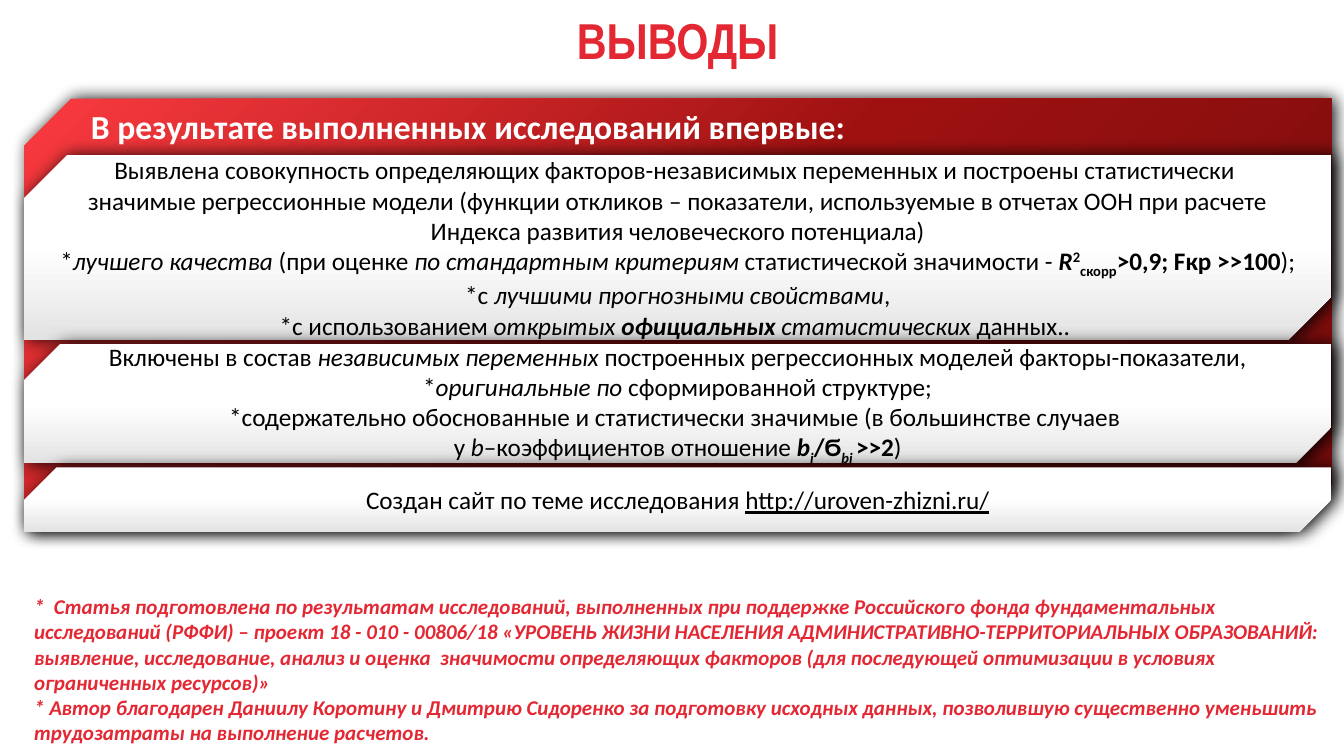
"""Build the conclusions slide: title, snipped panel with three findings, and footnotes."""
from copy import deepcopy

from lxml import etree
from pptx import Presentation
from pptx import util as u
from pptx.dml.color import RGBColor
from pptx.enum import shapes, text
from pptx.oxml.ns import qn

TITLE = [["ВЫВОДЫ"]]
HEADING = [["В результате выполненных исследований впервые:"]]
FOOTNOTES = [
    ["*  Статья подготовлена по результатам исследований, выполненных при поддержке "
     "Российского фонда фундаментальных исследований (РФФИ) – проект 18 - 010 - 00806/18 "
     "«УРОВЕНЬ ЖИЗНИ НАСЕЛЕНИЯ АДМИНИСТРАТИВНО-ТЕРРИТОРИАЛЬНЫХ ОБРАЗОВАНИЙ: выявление, "
     "исследование, анализ и оценка  значимости определяющих факторов (для последующей "
     "оптимизации в условиях ограниченных ресурсов)»"],
    ["* Автор благодарен Даниилу Коротину и Дмитрию Сидоренко за подготовку исходных данных, "
     "позволившую существенно уменьшить трудозатраты на выполнение расчетов."],
]
MODELS = [
    ["Выявлена совокупность определяющих факторов-независимых переменных и построены статистически "],
    ["значимые регрессионные модели (функции откликов – показатели, используемые в отчетах ООН "
     "при расчете Индекса развития человеческого потенциала)"],
    ["*", ("лучшего качества ", "i"), "(при оценке ", ("по стандартным критериям", "i"),
     " статистической значимости - ", ("R", "bi"), ("2", "b^"), ("скорр", "b_"),
     (">0,9; Fкр >>100", "b"), ");"],
    ["*с ", ("лучшими прогнозными свойствами", "i"), ","],
    ["*с использованием ", ("открытых ", "i"), ("официальных", "bi"),
     (" статистических", "i"), " данных.. "],
]
FACTORS = [
    ["Включены в состав ", ("независимых переменных ", "i"),
     "построенных регрессионных моделей факторы-показатели, *",
     ("оригинальные по", "i"), " сформированной структуре;"],
    ["*содержательно обоснованные и статистически значимые (в большинстве случаев "],
    ["у ", ("b", "i"), "–коэффициентов отношение ", ("b", "bi"), ("i", "bi_"), ("/Ϭ", "b"),
     ("bi ", "bi_"), (">>2", "b"), ")"],
]
SITE = [["Создан сайт по теме исследования ", ("http://uroven-zhizni.ru/", "u")]]

FINDINGS = [(MODELS, 4.65, 0.232), (FACTORS, 3.02, 0.303), (SITE, 1.63, 0.5)]
RED, OUTLINE = "E32833", "740C0C"
PANEL_STOPS = ["FA3B40", "9F1111", "740C0C"]
FINDING_STOPS = ["FFFFFF", "FFFFFF", "E3E3E3"]
LEFT, WIDTH = 0.61, 32.94
FINDINGS_TOP, GAP = 3.91, 0.1


def rgb(colour):
    return RGBColor.from_string(colour)


def write(box, paragraphs, size, colour, style="", font="Calibri", align=text.PP_ALIGN.LEFT,
          anchor=text.MSO_ANCHOR.TOP, insets=(0.25, 0.13, 0.25, 0.13), spacing=None, outline=None):
    frame = box.text_frame
    frame.word_wrap = True
    frame.vertical_anchor = anchor
    (frame.margin_left, frame.margin_top,
     frame.margin_right, frame.margin_bottom) = map(u.Cm, insets)
    for index, pieces in enumerate(paragraphs):
        paragraph = frame.add_paragraph() if index else frame.paragraphs[0]
        paragraph.alignment = align
        paragraph.line_spacing = spacing
        for piece in pieces:
            words, marks = (piece, style) if isinstance(piece, str) else piece
            run = paragraph.add_run()
            run.text = words
            run.font.name, run.font.size = font, u.Pt(size)
            run.font.bold, run.font.italic = "b" in marks, "i" in marks
            run.font.underline = "u" in marks
            run.font.color.rgb = rgb(colour)
            props = run.font._element
            if "^" in marks or "_" in marks:
                props.set("baseline", "30000" if "^" in marks else "-25000")
            if outline:
                line = etree.Element(qn("a:ln"), w=str(u.Pt(outline)))
                fill = etree.SubElement(line, qn("a:solidFill"))
                etree.SubElement(fill, qn("a:srgbClr"), val=OUTLINE)
                props.insert(0, line)


def add_text_box(slide, top, height):
    return slide.shapes.add_textbox(*map(u.Cm, (LEFT, top, WIDTH, height)))


def add_snipped(slide, top, height, snip, colours, angle):
    shape = slide.shapes.add_shape(shapes.MSO_SHAPE.SNIP_2_DIAG_RECTANGLE,
                                   *map(u.Cm, (LEFT, top, WIDTH, height)))
    shape.adjustments[0], shape.adjustments[1] = snip, 0
    shape.line.fill.background()
    shape.fill.gradient()
    shape.fill.gradient_angle = angle
    props = shape._element.spPr
    first = props.find(".//" + qn("a:gs"))
    first.addnext(deepcopy(first))
    for stop, position, colour in zip(shape.fill.gradient_stops, (0, 0.5, 1), colours):
        stop.position = position
        stop.color.rgb = rgb(colour)
    shape.shadow.inherit = False
    shadow = etree.SubElement(props.find(qn("a:effectLst")), qn("a:outerShdw"),
                              blurRad=str(u.Pt(12)), dist=str(u.Pt(3)), dir="0", rotWithShape="0")
    black = etree.SubElement(shadow, qn("a:srgbClr"), val="000000")
    etree.SubElement(black, qn("a:alpha"), val="87000")
    return shape


def main():
    deck = Presentation()
    deck.slide_width, deck.slide_height = u.Cm(33.87), u.Cm(19.05)
    slide = deck.slides.add_slide(deck.slide_layouts[6])
    centre, middle = text.PP_ALIGN.CENTER, text.MSO_ANCHOR.MIDDLE

    write(add_text_box(slide, 0.38, 1.52), TITLE, 36, RED, style="b", font="Arial Narrow",
          align=centre, anchor=middle, spacing=0.8, outline=0.52)
    write(add_text_box(slide, 14.83, 4.11), FOOTNOTES, 15, RED, style="bi", outline=0.75)

    panel = add_snipped(slide, 2.49, 10.9, 0.109, PANEL_STOPS, 315)
    write(panel, HEADING, 24, "FFFFFF", style="b", anchor=text.MSO_ANCHOR.BOTTOM,
          insets=(1.09, 0, 0.2, 9.09), spacing=0.9)

    top = FINDINGS_TOP
    for paragraphs, height, snip in FINDINGS:
        finding = add_snipped(slide, top, height, snip, FINDING_STOPS, 270)
        write(finding, paragraphs, 18, "000000", align=centre, anchor=middle,
              insets=(0, 0.2, 0, 0.2))
        top += height + GAP

    deck.save("out.pptx")


if __name__ == "__main__":
    main()
